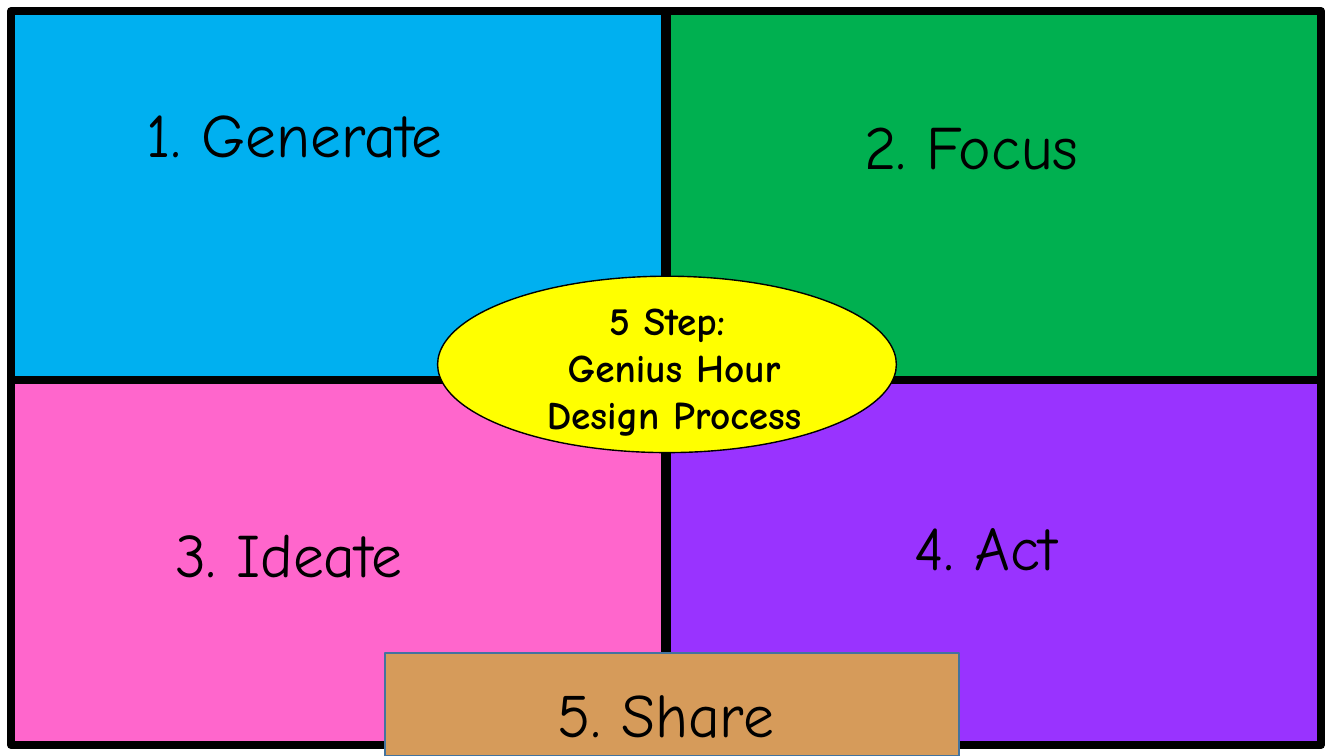
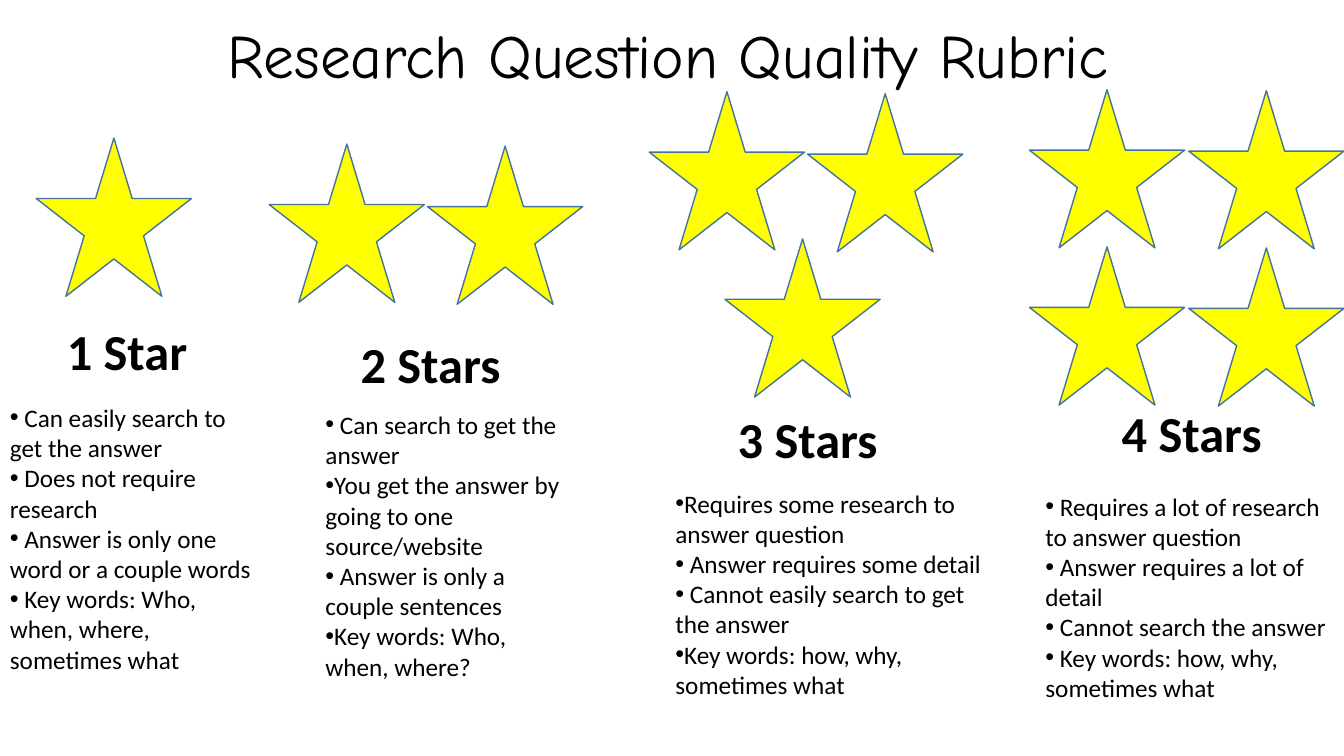
from dataclasses import dataclass

from lxml import etree
from pptx import Presentation
from pptx.dml.color import RGBColor
from pptx.enum.shapes import MSO_SHAPE as Shape
from pptx.enum.text import MSO_ANCHOR as Anchor, MSO_AUTO_SIZE as AutoSize, PP_ALIGN as Align
from pptx.oxml.ns import qn
from pptx.util import Pt

PX = 9144  # EMU in one px: 100 px make an inch
BLANK_LAYOUT = 6

BLACK = RGBColor(0x00, 0x00, 0x00)
BLUE = RGBColor(0x00, 0xB0, 0xF0)
GREEN = RGBColor(0x00, 0xB0, 0x50)
PINK = RGBColor(0xFF, 0x66, 0xCC)
PURPLE = RGBColor(0x99, 0x33, 0xFF)
YELLOW = RGBColor(0xFF, 0xFF, 0x00)
TAN = RGBColor(0xD6, 0x9B, 0x5A)
STEEL = RGBColor(0x43, 0x73, 0x9E)

HAND_FONT = "Comic Neue"
BODY_FONT = "Calibri"
HEADING_SIZE = 44

GRID_LEFT, GRID_TOP = 11, 11
CELL_WIDTH = 649
ROW_HEIGHTS = (366, 362)
CELL_COLORS = ((BLUE, GREEN), (PINK, PURPLE))
STEP_LABELS = (
    ("1. Generate", (64, 90, 457, 84)),
    ("2. Focus", (735, 102, 457, 84)),
    ("3. Ideate", (58, 507, 457, 84)),
    ("4. Act", (674, 500, 608, 84)),
)

STAR_WIDTH, STAR_HEIGHT = 154, 157
LABEL_WIDTH, LABEL_HEIGHT = 218, 71


@dataclass
class Level:
    label: str
    label_at: tuple
    stars: tuple
    criteria_box: tuple
    criteria: tuple


LEVELS = (
    Level("1 Star", (17, 313), ((36, 137),), (0, 394, 263, 283), (
        " Can easily search to get the answer",
        " Does not require research",
        " Answer is only one word or a couple words",
        " Key words: Who, when, where, sometimes what",
    )),
    Level("2 Stars", (318, 326), ((424, 145), (267, 143)), (313, 401, 264, 283), (
        " Can search to get the answer",
        "You get the answer by going to one source/website",
        " Answer is only a couple sentences",
        "Key words: Who, when, where?",
    )),
    Level("3 Stars", (692, 400), ((719, 237), (801, 93), (644, 91)), (660, 479, 328, 222), (
        "Requires some research to answer question",
        " Answer requires some detail",
        " Cannot easily search to get the answer",
        "Key words: how, why, sometimes what",
    )),
    Level("4 Stars", (1073, 394), ((1021, 89), (1179, 90), (1179, 246), (1021, 245)),
          (1027, 482, 306, 222), (
        " Requires a lot of research to answer question",
        " Answer requires a lot of detail",
        " Cannot search the answer",
        " Key words: how, why, sometimes what",
    )),
)


def scaled(box):
    return [length * PX for length in box]


def add_filled_shape(page, kind, box, fill, line, line_width=1):
    shape = page.shapes.add_shape(kind, *scaled(box))
    shape.shadow.inherit = False
    shape.fill.solid()
    shape.fill.fore_color.rgb = fill
    shape.line.color.rgb = line
    shape.line.width = Pt(line_width)
    return shape


def add_text(page, box, lines, size, font=HAND_FONT, bold=False, align=Align.CENTER):
    """Add a wrapping text box with one paragraph per line and return its frame."""
    frame = page.shapes.add_textbox(*scaled(box)).text_frame
    frame.word_wrap = True
    frame.auto_size = AutoSize.SHAPE_TO_FIT_TEXT
    for index, line in enumerate(lines):
        para = frame.add_paragraph() if index else frame.paragraphs[0]
        para.text = line
        para.alignment = align
        para.font.name = font
        para.font.size = Pt(size)
        para.font.bold = bold
        para.font.color.rgb = BLACK
    return frame


def add_bullets(frame):
    for para in frame.paragraphs:
        properties = para._p.get_or_add_pPr()
        etree.SubElement(properties, qn("a:buFont")).set("typeface", "Arial")
        etree.SubElement(properties, qn("a:buChar")).set("char", "•")
        # Default run properties come after the bullet in the schema.
        properties.append(properties.find(qn("a:defRPr")))


def add_quadrants(page):
    top = GRID_TOP
    for height, colors in zip(ROW_HEIGHTS, CELL_COLORS):
        for column, color in enumerate(colors):
            left = GRID_LEFT + column * (CELL_WIDTH + 1)
            add_filled_shape(page, Shape.RECTANGLE, (left, top, CELL_WIDTH, height),
                             color, BLACK, 6)
        top += height


def build_process(page):
    add_quadrants(page)
    add_filled_shape(page, Shape.OVAL, (434, 274, 455, 175), YELLOW, BLACK)
    add_text(page, (493, 289, 351, 151), ("5 Step: ", "Genius Hour Design Process"), 28, bold=True)
    for label, box in STEP_LABELS:
        add_text(page, box, (label,), HEADING_SIZE)
    add_filled_shape(page, Shape.RECTANGLE, (382, 648, 569, 102), TAN, STEEL)
    add_text(page, (341, 666, 639, 84), ("5. Share",), HEADING_SIZE)


def add_level(page, level):
    for left, top in level.stars:
        add_filled_shape(page, Shape.STAR_5_POINT, (left, top, STAR_WIDTH, STAR_HEIGHT),
                         YELLOW, STEEL)
    add_text(page, (*level.label_at, LABEL_WIDTH, LABEL_HEIGHT), (level.label,), 36,
             BODY_FONT, bold=True)
    add_bullets(add_text(page, level.criteria_box, level.criteria, 18, BODY_FONT,
                         align=Align.LEFT))


def build_rubric(page):
    title = add_text(page, (88, 18, 1150, 81), ("Research Question Quality Rubric",), HEADING_SIZE)
    title.auto_size = AutoSize.NONE
    title.vertical_anchor = Anchor.MIDDLE
    title.paragraphs[0].line_spacing = 0.9
    for level in LEVELS:
        add_level(page, level)


def main():
    deck = Presentation()
    deck.slide_width, deck.slide_height = scaled((1333, 750))
    for build in (build_process, build_rubric):
        build(deck.slides.add_slide(deck.slide_layouts[BLANK_LAYOUT]))
    deck.save("out.pptx")


if __name__ == "__main__":
    main()
